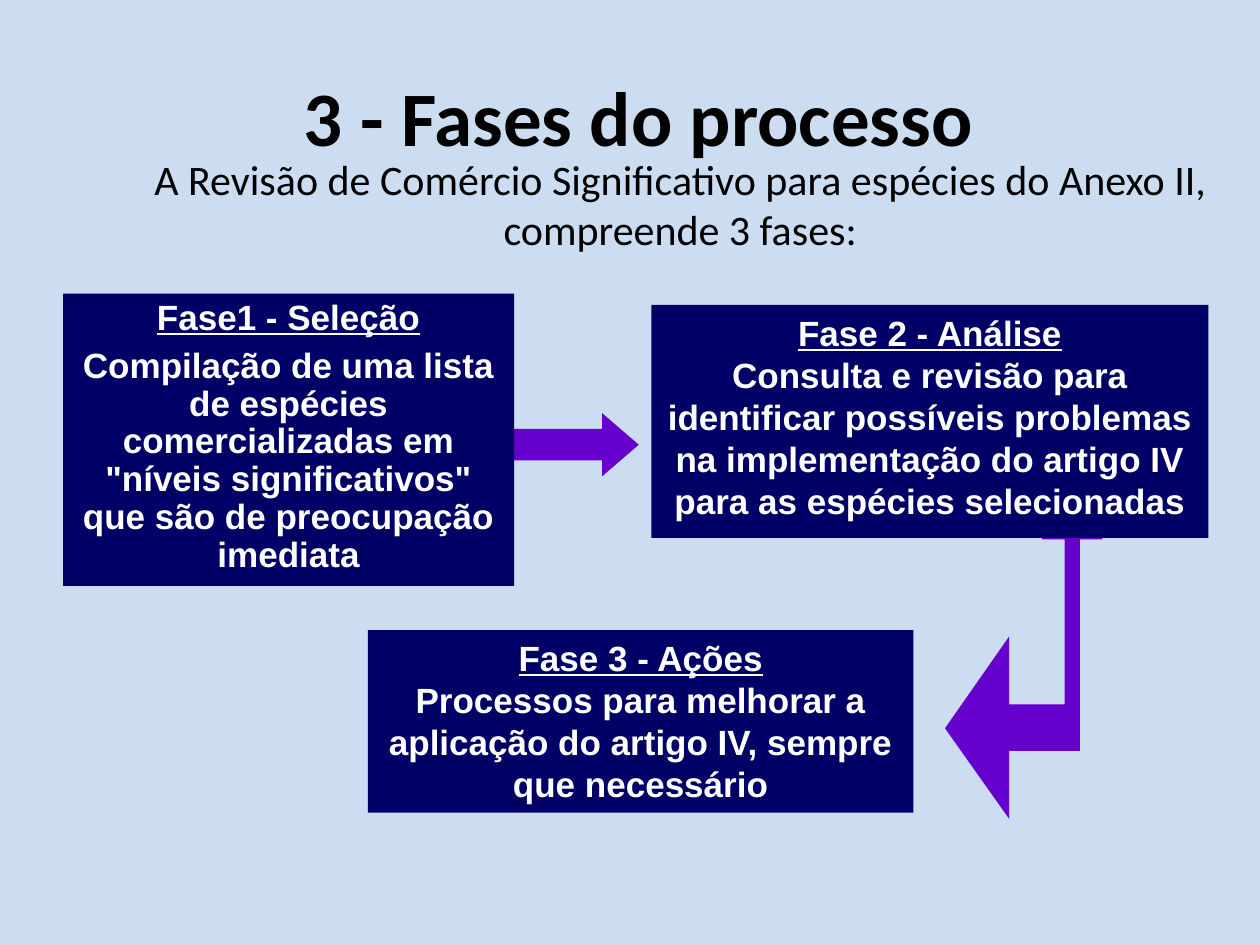
from pptx import Presentation
from pptx.dml.color import RGBColor
from pptx.enum.shapes import MSO_SHAPE
from pptx.enum.text import MSO_ANCHOR, MSO_AUTO_SIZE, PP_ALIGN
from pptx.util import Inches, Pt

COLORS = {"sky": "CCDDF2", "navy": "000066", "violet": "6600CC",
          "black": "000000", "white": "FFFFFF"}
SIZE = (10, 7.5)
TITLE = "3 - Fases do processo"
SUBTITLE = ("A Revisão de Comércio Significativo para espécies do Anexo II, "
            "compreende 3 fases:")
TIGHT = {"line_spacing": 0.9, "space_after": Pt(6)}
PHASES = [
    ("Fase1 - Seleção",
     "Compilação de uma lista de espécies comercializadas em "
     "\"níveis significativos\" que são de preocupação imediata",
     (0.5, 2.33, 3.58, 2.32), TIGHT),
    ("Fase 2 - Análise",
     "Consulta e revisão para identificar possíveis problemas na "
     "implementação do artigo IV para as espécies selecionadas",
     (5.17, 2.42, 4.42, 1.85), {}),
    ("Fase 3 - Ações",
     "Processos para melhorar a aplicação do artigo IV, sempre que necessário",
     (2.92, 5, 4.33, 1.45), {}),
]
STRAIGHT_ARROW = (3.9, 3.28, 1.17, 0.5)
BENT_ARROW = [(8.51, 2.75), (8.27, 4.28), (8.45, 4.28), (8.45, 5.59),
              (8.01, 5.59), (8.01, 5.05), (7.5, 5.78), (8.01, 6.5),
              (8.01, 5.96), (8.57, 5.96), (8.57, 4.28), (8.75, 4.28)]


def paint(shape, color):
    shape.shadow.inherit = False
    shape.fill.solid()
    shape.fill.fore_color.rgb = RGBColor.from_string(COLORS[color])
    shape.line.fill.background()


def write(para, text, color, spacing=None, **font):
    para.alignment = PP_ALIGN.CENTER
    for name, value in (spacing or {}).items():
        setattr(para, name, value)
    span = para.add_run()
    span.text = text
    span.font.color.rgb = RGBColor.from_string(COLORS[color])
    for name, value in font.items():
        setattr(span.font, name, value)


def add_heading(page, text, place, anchor, **font):
    frame = page.shapes.add_textbox(*map(Inches, place)).text_frame
    frame.word_wrap = True
    frame.vertical_anchor = anchor
    write(frame.paragraphs[0], text, "black", name="Calibri", **font)


def add_phase(page, heading, body, place, spacing):
    box = page.shapes.add_shape(MSO_SHAPE.RECTANGLE, *map(Inches, place))
    paint(box, "navy")
    frame = box.text_frame
    frame.word_wrap = True
    frame.auto_size = MSO_AUTO_SIZE.SHAPE_TO_FIT_TEXT
    frame.vertical_anchor = MSO_ANCHOR.TOP
    for para, text, underline in ((frame.paragraphs[0], heading, True),
                                  (frame.add_paragraph(), body, False)):
        write(para, text, "white", spacing, name="Arial", size=Pt(20),
              bold=True, underline=underline)


def add_arrows(page):
    arrow = page.shapes.add_shape(MSO_SHAPE.RIGHT_ARROW,
                                  *map(Inches, STRAIGHT_ARROW))
    arrow.adjustments[1] = 0.58
    paint(arrow, "violet")
    start, *corners = [(Inches(x), Inches(y)) for x, y in BENT_ARROW]
    builder = page.shapes.build_freeform(*start)
    builder.add_line_segments(corners, close=True)
    paint(builder.convert_to_shape(), "violet")


def main():
    """Build the slide on the three phases of the review process."""
    deck = Presentation()
    deck.slide_width, deck.slide_height = map(Inches, SIZE)
    page = deck.slides.add_slide(deck.slide_layouts[6])
    page.background.fill.solid()
    page.background.fill.fore_color.rgb = RGBColor.from_string(COLORS["sky"])
    add_arrows(page)
    add_heading(page, SUBTITLE, (0.8, 1.17, 9.2, 1), MSO_ANCHOR.TOP, size=Pt(24))
    add_heading(page, TITLE, (0.56, 0.29, 9.02, 1.26), MSO_ANCHOR.MIDDLE,
                size=Pt(44), bold=True)
    for phase in PHASES:
        add_phase(page, *phase)
    deck.save("out.pptx")


if __name__ == "__main__":
    main()
